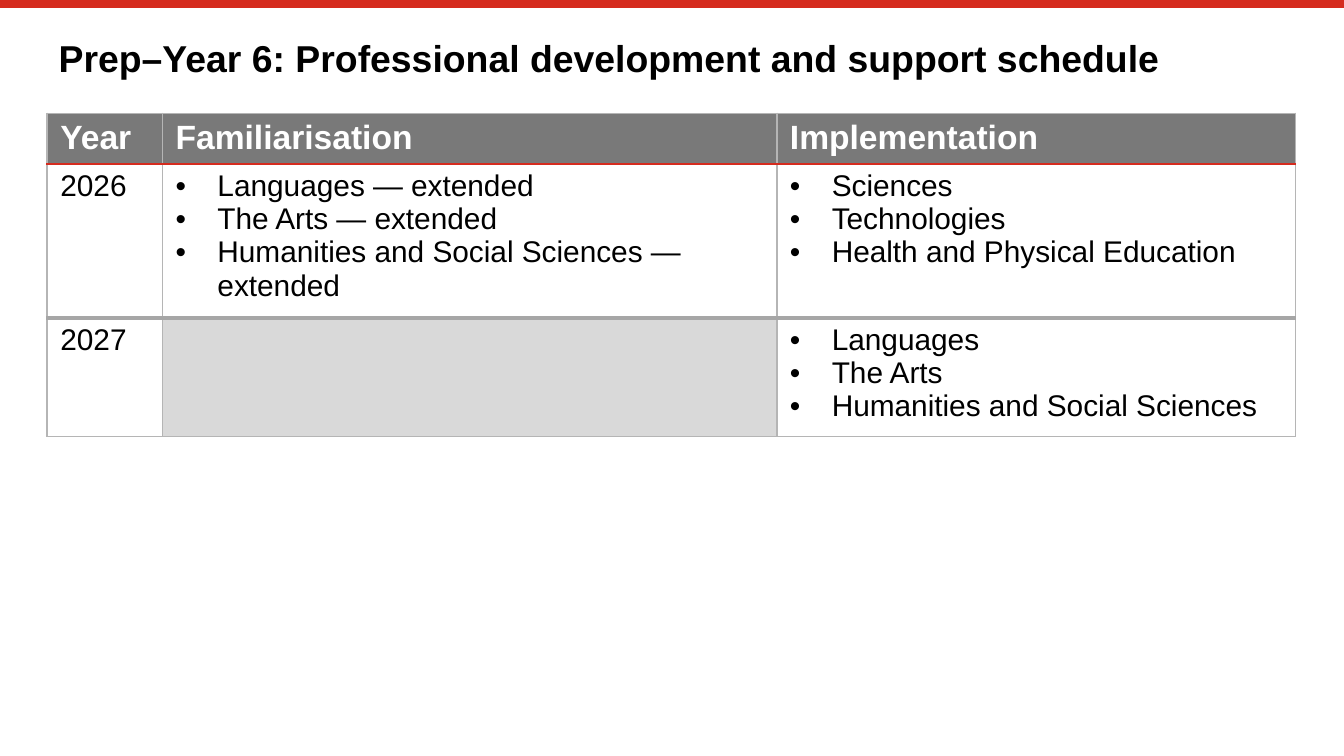
from pptx import Presentation
from pptx.dml.color import RGBColor
from pptx.enum.text import MSO_ANCHOR
from pptx.oxml.ns import qn
from pptx.util import Cm, Pt
from lxml.etree import SubElement


def style(font, size, color, bold=False):
    font.name, font.size, font.bold = "Arial", Pt(size), bold
    font.color.rgb = RGBColor.from_string(color)


def add_border(cell, side, color, width):
    line = SubElement(cell._tc.get_or_add_tcPr(), qn(f"a:ln{side}"), w=str(Pt(width)))
    fill = SubElement(line, qn("a:solidFill"))
    SubElement(fill, qn("a:srgbClr"), val=color)


deck = Presentation()
deck.slide_width, deck.slide_height = Cm(25.4), Cm(14.28)
page = deck.slides.add_slide(deck.slide_layouts[6])

# Red band along the top edge
band = page.shapes.add_connector(1, 0, Cm(0.08), deck.slide_width, Cm(0.08))
band.line.color.rgb = RGBColor.from_string("D52B1E")
band.line.width = Pt(4.2)
SubElement(band._element.spPr, qn("a:effectLst"))

# Title
box = page.shapes.add_textbox(Cm(0.91), Cm(0.76), Cm(23.6), Cm(0.99))
frame = box.text_frame
frame.word_wrap = True
frame.vertical_anchor = MSO_ANCHOR.TOP
frame.margin_left = Cm(0.2)
frame.margin_right = frame.margin_top = frame.margin_bottom = 0
para = frame.paragraphs[0]
para.text = "Prep–Year 6: Professional development and support schedule"
para.line_spacing = 0.9
style(para.font, 20, "000000", True)

# Schedule: a list in a cell becomes bullets
schedule = [
    ["Year", "Familiarisation", "Implementation"],
    ["2026",
     ["Languages — extended", "The Arts — extended",
      "Humanities and Social Sciences — extended"],
     ["Sciences", "Technologies", "Health and Physical Education"]],
    ["2027", [],
     ["Languages", "The Arts", "Humanities and Social Sciences"]],
]
widths = [2.18, 11.61, 9.8]
heights = [0.9, 2.7, 2.05]
thin = ("B5B5B5", 1)
rules = [thin, ("D52B1E", 1.5), ("A6A6A6", 2.25), thin]

table = page.shapes.add_table(3, 3, Cm(0.89), Cm(2.14),
                              Cm(sum(widths)), Cm(sum(heights))).table
table.first_row = table.horz_banding = False
for column, width in zip(table.columns, widths):
    column.width = Cm(width)
for row, height in zip(table.rows, heights):
    row.height = Cm(height)

for r, entries in enumerate(schedule):
    for c, entry in enumerate(entries):
        cell = table.cell(r, c)
        cell.margin_left = cell.margin_right = Cm(0.25)
        cell.margin_top = cell.margin_bottom = Cm(0.1)

        # Borders, then fill
        for side, rule in zip("LRTB", [thin, thin, rules[r], rules[r + 1]]):
            add_border(cell, side, *rule)
        if r == 0 or not entry:
            cell.fill.solid()
            cell.fill.fore_color.rgb = RGBColor.from_string("D9D9D9" if r else "797979")
        else:
            cell.fill.background()

        # Text
        bulleted = isinstance(entry, list)
        cell.text = "\n".join(entry) if bulleted else entry
        for para in cell.text_frame.paragraphs:
            if bulleted and entry:
                props = para._p.get_or_add_pPr()
                props.set("marL", str(Cm(0.79)))
                props.set("indent", str(-Cm(0.79)))
                SubElement(props, qn("a:buFont"), typeface="Arial")
                SubElement(props, qn("a:buChar"), char="•")
            if r == 0:
                style(para.font, 18, "FFFFFF", True)
            else:
                style(para.font, 16, "000000")

deck.save("out.pptx")
